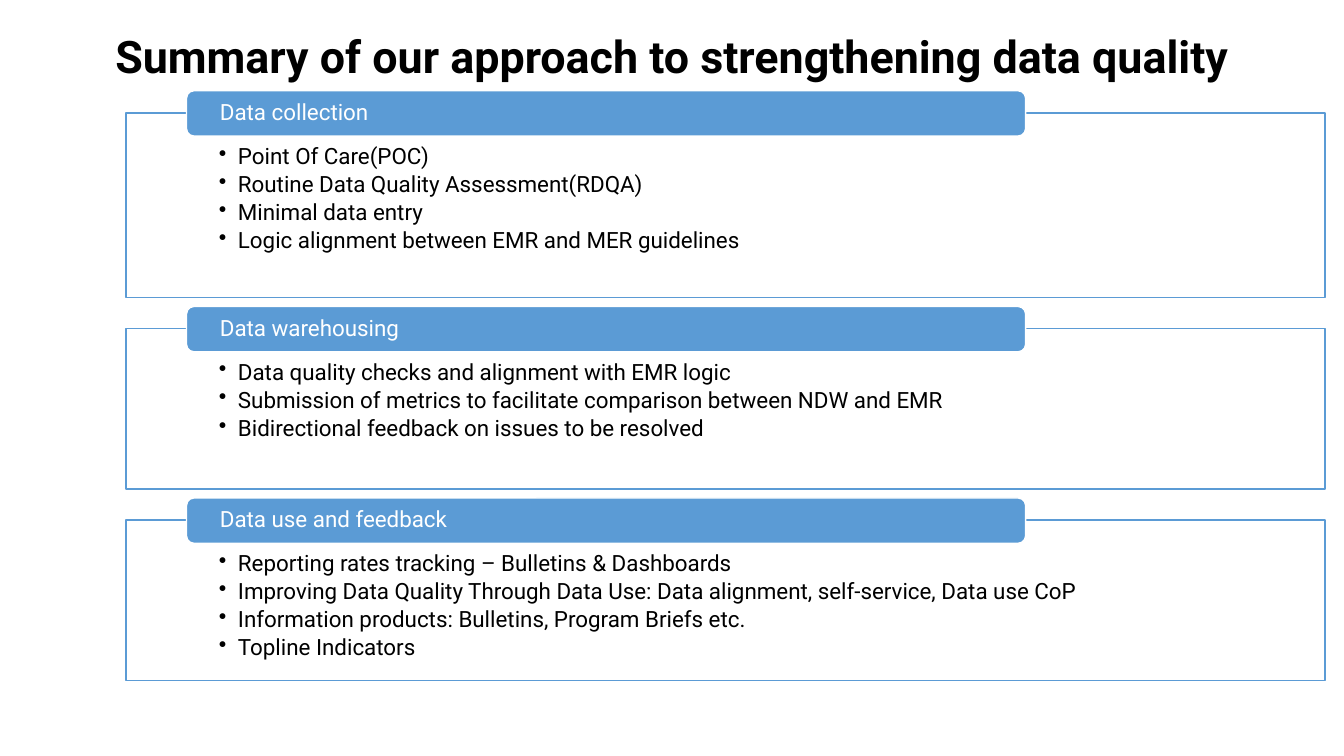
from pptx import Presentation
from pptx.dml.color import RGBColor
from pptx.enum import shapes, text
from pptx.oxml import ns, xmlchemy
from pptx.util import Inches, Pt

FONT = "Roboto"
BLUE, WHITE, BLACK = "5B9BD5", "FFFFFF", "000000"
SECTIONS = [
    ("Data collection", 1.83, [
        "Point Of Care(POC)",
        "Routine Data Quality Assessment(RDQA)",
        "Minimal data entry",
        "Logic alignment between EMR and MER guidelines",
    ]),
    ("Data warehousing", 1.59, [
        "Data quality checks and alignment with EMR logic",
        "Submission of metrics to facilitate comparison between NDW and EMR",
        "Bidirectional feedback on issues to be resolved",
    ]),
    ("Data use and feedback", 1.59, [
        "Reporting rates tracking – Bulletins & Dashboards",
        "Improving Data Quality Through Data Use: Data alignment, self-service, Data use CoP",
        "Information products: Bulletins, Program Briefs etc.",
        "Topline Indicators",
    ]),
]


def rgb(value):
    return RGBColor.from_string(value)


def add_text(p, content, size=16, color=BLACK, bold=False,
             align=text.PP_ALIGN.LEFT, after=0, bullet=False):
    if bullet:
        p.level = 1
        pPr = p._p.get_or_add_pPr()
        pPr.set("marL", str(Inches(0.19)))
        pPr.set("indent", str(Inches(-0.19)))
        bu = xmlchemy.OxmlElement("a:buChar")
        bu.set("char", "•")
        pPr.append(bu)
    p.alignment = align
    p.line_spacing = 0.9
    p.space_before = Pt(0)
    p.space_after = Pt(after)
    r = p.add_run()
    r.text = content
    r.font.name, r.font.size, r.font.bold = FONT, Pt(size), bold
    r.font.color.rgb = rgb(color)


def add_box(s, kind, x, y, w, h, fill, line, insets, anchor):
    sp = s.shapes.add_shape(kind, Inches(x), Inches(y), Inches(w), Inches(h))
    sp.shadow.inherit = False
    sp.fill.solid()
    sp.fill.fore_color.rgb = rgb(fill)
    sp.line.color.rgb = rgb(line)
    sp.line.width = Pt(1)
    tf = sp.text_frame
    tf.word_wrap = True
    tf.vertical_anchor = anchor
    tf.margin_left = tf.margin_right = Inches(insets[0])
    tf.margin_top, tf.margin_bottom = Inches(insets[1]), Inches(insets[2])
    return sp


def add_title(s, x, y, w, h):
    sp = s.shapes.title
    sp.left, sp.top, sp.width, sp.height = (Inches(v) for v in (x, y, w, h))
    tf = sp.text_frame
    tf.word_wrap = True
    tf.auto_size = text.MSO_AUTO_SIZE.NONE
    tf.vertical_anchor = text.MSO_ANCHOR.MIDDLE
    add_text(tf.paragraphs[0], "Summary of our approach to strengthening data quality",
             size=32, bold=True, align=text.PP_ALIGN.CENTER)


def add_section(s, heading, items, x, y, w, h):
    # Outlined frame with the bullet list
    frame = add_box(s, shapes.MSO_SHAPE.RECTANGLE, x, y, w, h, WHITE, BLUE,
                    (0.92, 0.32, 0.12), text.MSO_ANCHOR.TOP)
    alpha = xmlchemy.OxmlElement("a:alpha")
    alpha.set("val", "90000")
    frame.fill._xPr.find(ns.qn("a:solidFill"))[0].append(alpha)
    tf = frame.text_frame
    for i, item in enumerate(items):
        p = tf.add_paragraph() if i else tf.paragraphs[0]
        add_text(p, item, after=2.8, bullet=True)

    # Heading bar straddling the top edge of the frame
    bar = add_box(s, shapes.MSO_SHAPE.ROUNDED_RECTANGLE, x + 0.6, y - 0.22,
                  w * 0.7, 0.45, BLUE, WHITE, (0.31, 0, 0), text.MSO_ANCHOR.MIDDLE)
    add_text(bar.text_frame.paragraphs[0], heading, color=WHITE)


def main():
    prs = Presentation()
    prs.slide_width, prs.slide_height = Inches(13.33), Inches(7.5)
    s = prs.slides.add_slide(prs.slide_layouts.get_by_name("Title Only"))
    add_title(s, 0.92, 0.17, 11.5, 0.83)

    # Sections stacked with an equal gap
    y, gap = 1.12, 0.31
    for heading, h, items in SECTIONS:
        add_section(s, heading, items, 1.25, y, 11.89, h)
        y += h + gap
    prs.save("out.pptx")


if __name__ == "__main__":
    main()
